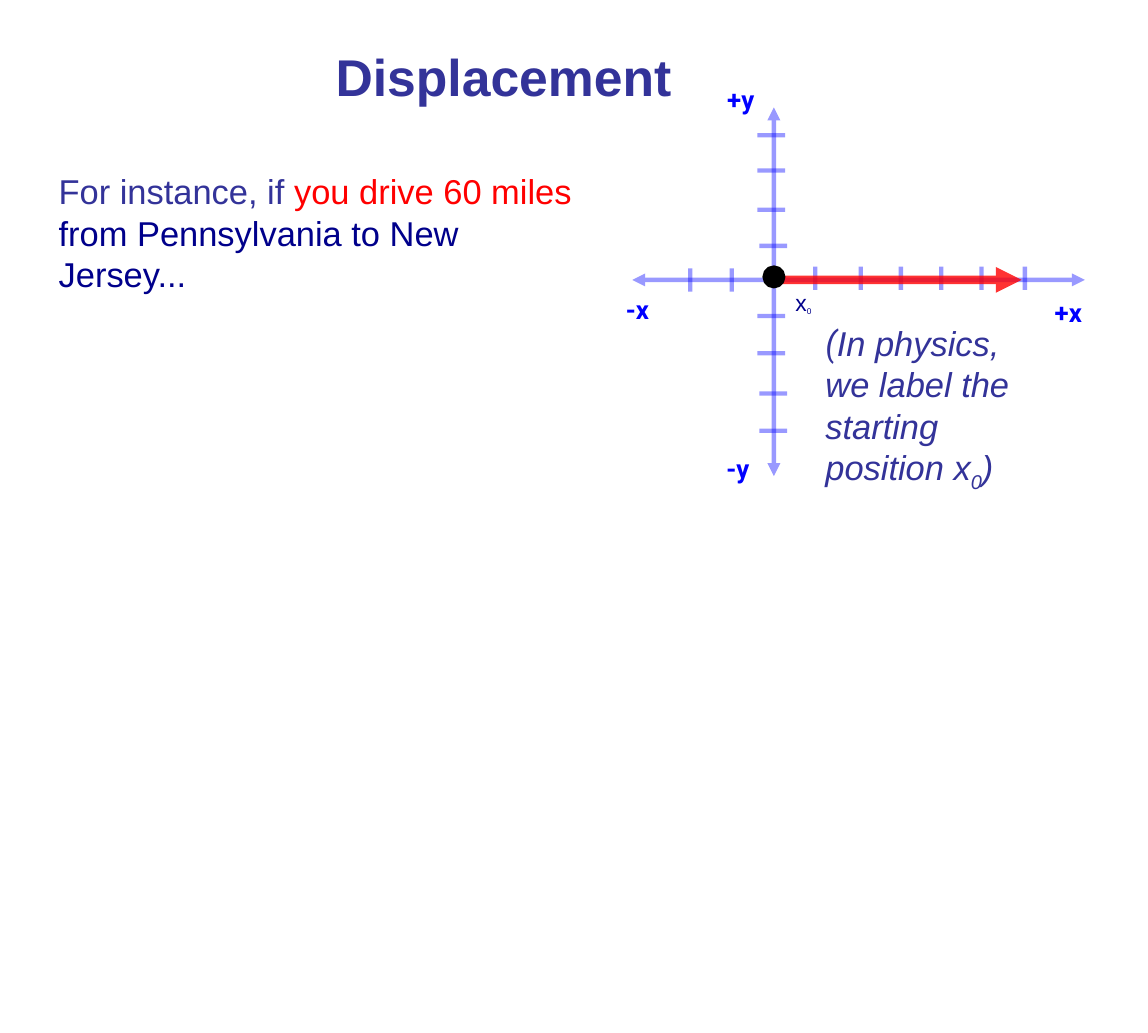
from lxml.etree import SubElement
from pptx import Presentation
from pptx.dml.color import RGBColor
from pptx.enum.shapes import MSO_CONNECTOR, MSO_SHAPE
from pptx.enum.text import MSO_ANCHOR, PP_ALIGN
from pptx.oxml.ns import qn
from pptx.util import Pt

BLUE = RGBColor(0x00, 0x00, 0xFF)
INDIGO = RGBColor(0x33, 0x33, 0x99)
NAVY = RGBColor(0x00, 0x00, 0x8B)
RED = RGBColor(0xFF, 0x00, 0x00)
BLACK = RGBColor(0x00, 0x00, 0x00)

TITLE = "Displacement"
ORIGIN_X, ORIGIN_Y = 539.3, 195.1
X_ENDS, Y_ENDS = (440.6, 756), (74.9, 331.9)
DISPLACEMENT_END = 712
DOT = 13

# Tick position along its axis, then where the tick starts across it
TICK_LENGTH_X, TICK_LENGTH_Y = 16.3, 19.4
X_TICKS = [(481, 187), (510, 187), (568.1, 185.8), (599.8, 185.8),
           (627.8, 185.8), (655.9, 185.8), (684, 185.8), (714.2, 185.8)]
Y_TICKS = [(94.3, 527.8), (118.8, 527.8), (146.2, 527.8), (171.4, 529.2),
           (220.3, 527.8), (246.2, 527.8), (274.3, 529.2), (300.2, 529.2)]

AXIS_LABELS = [("-x", 429.1, 200.9), ("+x", 727.9, 203),
               ("+y", 499.7, 54.7), ("-y", 499, 311.8)]

# Box (left, top, width, height), then runs of text, size, colour, font, subscript
STORY = ((33.8, 115.2, 386, 138), [
    ("For instance, if ", 24, INDIGO, "Arial", False),
    ("you drive 60 miles ", 24, RED, "Arial", False),
    ("from Pennsylvania to New Jersey...", 24, NAVY, "Arial", False)])
START_LABEL = ((547.2, 197.3, 54, 26.6), [
    ("x", 16, NAVY, "Arial", False),
    ("0", 10, NAVY, "Arial", True)])
START_NOTE = ((568.1, 221, 159.8, 123.8), [
    ("(", 24, INDIGO, "Roboto", False),
    ("In physics, we label the starting position x", 24, INDIGO, "Arial", False),
    ("0", 24, INDIGO, "Arial", True),
    (")", 24, INDIGO, "Arial", False)])


def add_line(slide, x1, y1, x2, y2, color=BLUE, width=3, opacity=40, arrows=()):
    """Draw a translucent line; arrows names its ends, headEnd before tailEnd."""
    c = slide.shapes.add_connector(MSO_CONNECTOR.STRAIGHT,
                                   Pt(x1), Pt(y1), Pt(x2), Pt(y2))
    c.line.color.rgb = color
    c.line.width = Pt(width)
    ln = c.line._get_or_add_ln()
    SubElement(ln.find(".//" + qn("a:srgbClr")), qn("a:alpha"), val=str(opacity * 1000))
    for end in arrows:
        SubElement(ln, qn("a:" + end), type="triangle")
    SubElement(c._element.spPr, qn("a:effectLst"))


def add_text(slide, box, runs, bold=False, italic=False):
    sp = slide.shapes.add_textbox(*map(Pt, box))
    tf = sp.text_frame
    tf.word_wrap = True
    for text, size, color, font, subscript in runs:
        r = tf.paragraphs[0].add_run()
        r.text = text
        r.font.size = Pt(size)
        r.font.name = font
        r.font.color.rgb = color
        r.font.bold = bold
        r.font.italic = italic
        if subscript:
            r.font._element.set("baseline", "-25000")


def add_title(slide):
    sp = slide.shapes.title
    sp.left, sp.top, sp.width, sp.height = map(Pt, (-2.2, 27.4, 706.3, 51.1))
    tf = sp.text_frame
    tf.text = TITLE
    tf.word_wrap = True
    tf.vertical_anchor = MSO_ANCHOR.TOP
    p = tf.paragraphs[0]
    p.alignment = PP_ALIGN.CENTER
    p.line_spacing = 1.0
    font = p.runs[0].font
    font.size, font.name, font.bold = Pt(36), "Arial", True
    font.color.rgb = INDIGO


def add_axes(slide):
    both = ("headEnd", "tailEnd")
    add_line(slide, ORIGIN_X, Y_ENDS[0], ORIGIN_X, Y_ENDS[1], arrows=both)
    add_line(slide, X_ENDS[0], ORIGIN_Y, X_ENDS[1], ORIGIN_Y, arrows=both)
    for x, top in X_TICKS:
        add_line(slide, x, top, x, top + TICK_LENGTH_X)
    for y, left in Y_TICKS:
        add_line(slide, left, y, left + TICK_LENGTH_Y, y)
    for text, left, top in AXIS_LABELS:
        add_text(slide, (left, top, 60, 28.8),
                 [(text, 18, BLUE, "Roboto", False)], bold=True)


def add_start_dot(slide):
    sp = slide.shapes.add_shape(MSO_SHAPE.OVAL, Pt(ORIGIN_X - DOT / 2), Pt(186.5),
                                Pt(DOT), Pt(DOT))
    sp.shadow.inherit = False
    sp.fill.solid()
    sp.fill.fore_color.rgb = BLACK
    sp.line.color.rgb = BLACK
    sp.line.width = Pt(3)


def main():
    prs = Presentation()
    prs.slide_width, prs.slide_height = Pt(800), Pt(720)
    slide = prs.slides.add_slide(prs.slide_layouts[5])
    add_title(slide)
    add_axes(slide)
    add_text(slide, *STORY)
    add_line(slide, ORIGIN_X, ORIGIN_Y, DISPLACEMENT_END, ORIGIN_Y,
             RED, 6, 80, ("tailEnd",))
    add_start_dot(slide)
    add_text(slide, *START_LABEL)
    add_text(slide, *START_NOTE, italic=True)
    prs.save("out.pptx")


if __name__ == "__main__":
    main()
